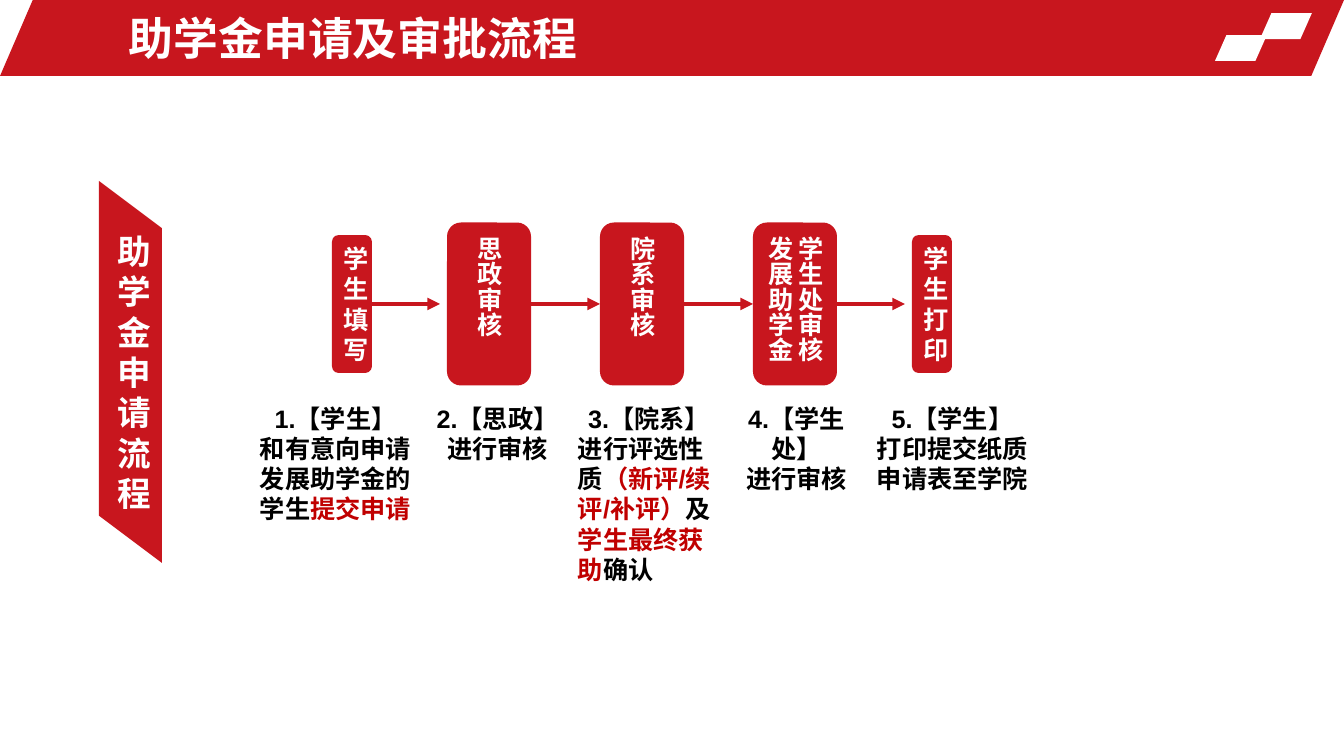
from pptx import Presentation
from pptx.dml.color import RGBColor as RGB
from pptx.enum.shapes import MSO_CONNECTOR as Link, MSO_SHAPE as Kind
from pptx.enum.text import MSO_ANCHOR as Anchor, PP_ALIGN as Align
from pptx.oxml.ns import qn
from pptx.util import Pt
from lxml.etree import SubElement as Sub

PX = 914400 / 100.8
WIDE, HIGH = 1344, 756
RED, DARK, WHITE, BLACK = "C8161E", "C00000", "FFFFFF", "000000"
MID = 304
NARROW, BROAD = (40, 138), (84, 163)

# card centre, card size, vertical text, card lines, caption (left, width, height),
# caption paragraphs as (text, colour) runs, alignment of the second paragraph
STEPS = [
    (352, NARROW, False, ["学生填写"], (244, 183, 132),
     [[("1.【学生】", BLACK)],
      [("和有意向申请发展助学金的学生", BLACK), ("提交申请", DARK)]], Align.CENTER),
    (489, BROAD, True, ["思政审核"], (423, 149, 72),
     [[("2.【思政】", BLACK)], [("进行审核", BLACK)]], Align.CENTER),
    (642, BROAD, True, ["院系审核"], (568, 162, 194),
     [[("3.【院系】", BLACK)],
      [("进行评选性质", BLACK), ("（新评/续评/补评）", DARK), ("及", BLACK),
       ("学生最终获助", DARK), ("确认", BLACK)]], Align.LEFT),
    (795, BROAD, True, ["学生处审核", "发展助学金"], (722, 149, 72),
     [[("4.【学生处】", BLACK)], [("进行审核", BLACK)]], Align.CENTER),
    (932, NARROW, False, ["学生打印"], (865, 175, 102),
     [[("5.【学生】", BLACK)], [("打印提交纸质申请表至学院", BLACK)]], Align.CENTER),
]
TIPS = [440, 600, 753, 905]


def px(*nums):
    return [round(n * PX) for n in nums]


def tint(code):
    return RGB.from_string(code)


def block(slide, kind, box, fill, adj=None):
    shape = slide.shapes.add_shape(kind, *px(*box))
    shape.shadow.inherit = False
    shape.fill.solid()
    shape.fill.fore_color.rgb = tint(fill)
    shape.line.fill.background()
    if adj is not None:
        shape.adjustments[0] = adj
    return shape


def style(para, size, color, align=Align.CENTER):
    para.alignment = align
    font = para.font
    font.name, font.size, font.bold = "Arial", Pt(size), True
    font.color.rgb = tint(color)


def label(shape, lines, size, vert=None):
    """Write white text into a shape, turned as vert says."""
    frame = shape.text_frame
    frame.word_wrap = True
    frame.vertical_anchor = Anchor.MIDDLE
    frame.text = "\n".join(lines)
    for para in frame.paragraphs:
        style(para, size, WHITE)
    if vert:
        frame._txBody.bodyPr.set("vert", vert)


def header(slide, box, title):
    x, y, w, h = box
    block(slide, Kind.PARALLELOGRAM, box, RED, 0.431)
    for dx, dy in [(84, 13), (129, 35)]:
        block(slide, Kind.PARALLELOGRAM, (x + w - dx, y + dy, 52, 26), WHITE, 0.444)
    area = slide.shapes.add_textbox(*px(x + 119, y + 5, 969, h - 10))
    label(area, [title], 32)
    para = area.text_frame.paragraphs[0]
    para.alignment = Align.LEFT
    para.space_before = Pt(10)


def banner(slide, box, text):
    """Place an upright slanted banner, drawn as a turned parallelogram."""
    x, y, w, h = box
    shape = block(slide, Kind.PARALLELOGRAM,
                  (x + (w - h) / 2, y + (h - w) / 2, h, w), RED, 0.75)
    shape.rotation = 90
    label(shape, [text], 24, "vert270")


def caption(slide, box, paras, align):
    frame = slide.shapes.add_textbox(*px(*box)).text_frame
    frame.word_wrap = True
    for i, runs in enumerate(paras):
        para = frame.add_paragraph() if i else frame.paragraphs[0]
        style(para, 18, BLACK, align if i else Align.CENTER)
        for text, color in runs:
            run = para.add_run()
            run.text = text
            if color != BLACK:
                run.font.color.rgb = tint(color)


def arrow(slide, start, tip, end):
    """Lead from one card to tip, joined to the next card if it touches."""
    x = start.left + start.width
    y = start.top + start.height // 2
    line = slide.shapes.add_connector(Link.STRAIGHT, x, y, px(tip)[0], y)
    line.begin_connect(start, 3)
    if abs(end.left - px(tip)[0]) < px(2)[0]:
        line.end_connect(end, 1)
    line.line.color.rgb = tint(RED)
    line.line.width = Pt(3)
    Sub(line.line._get_or_add_ln(), qn("a:tailEnd"), type="triangle")
    Sub(line._element.spPr, qn("a:effectLst"))


def flow(slide, mid, top):
    """Lay out cards around height mid, with captions starting at top."""
    cards = []
    for centre, (w, h), upright, lines, (x, wide, high), paras, align in STEPS:
        card = block(slide, Kind.ROUNDED_RECTANGLE,
                     (centre - w / 2, mid - h / 2, w, h), RED)
        label(card, lines, 18, "eaVert" if upright else None)
        caption(slide, (x, top, wide, high), paras, align)
        cards.append(card)
    for start, tip, end in zip(cards, TIPS, cards[1:]):
        arrow(slide, start, tip, end)


def main():
    deck = Presentation()
    deck.slide_width, deck.slide_height = px(WIDE, HIGH)
    slide = deck.slides.add_slide(deck.slide_layouts[6])
    header(slide, (0, 0, WIDE, 76), "助学金申请及审批流程")
    banner(slide, (99, 181, 63, 382), "助学金申请流程")
    flow(slide, MID, 398)
    deck.save("out.pptx")


if __name__ == "__main__":
    main()
